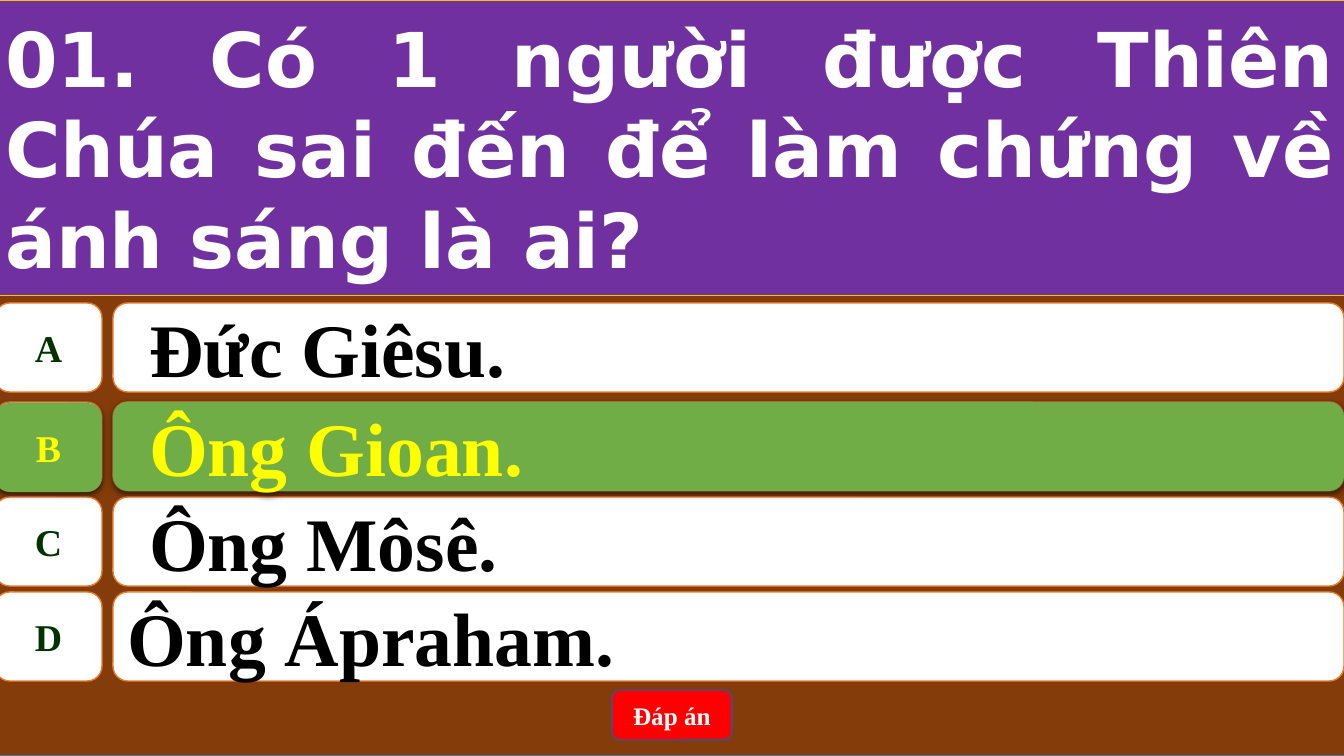
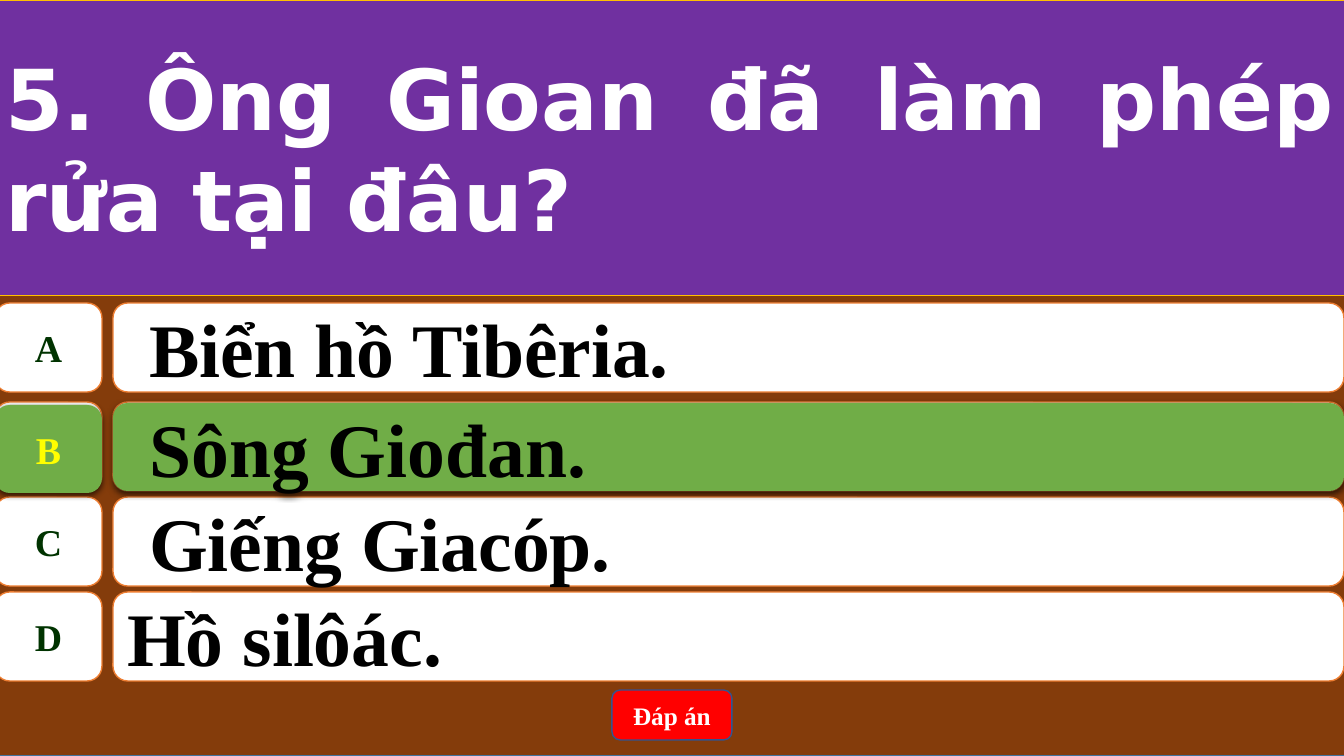
from lxml import etree
from pptx import Presentation
from pptx.dml.color import RGBColor
from pptx.enum.shapes import MSO_SHAPE
from pptx.enum.text import MSO_ANCHOR, MSO_AUTO_SIZE, PP_ALIGN
from pptx.oxml.ns import qn
from pptx.util import Pt

RECT, ROUND = MSO_SHAPE.RECTANGLE, MSO_SHAPE.ROUNDED_RECTANGLE
LETTER_BOX = MSO_SHAPE.FLOWCHART_ALTERNATE_PROCESS
LEFT, CENTER, JUSTIFY = PP_ALIGN.LEFT, PP_ALIGN.CENTER, PP_ALIGN.JUSTIFY
MIDDLE, NO_FIT = MSO_ANCHOR.MIDDLE, MSO_AUTO_SIZE.NONE

SLIDE_W, SLIDE_H = 1344, 756
EMU_PER_PX = 12192000 / SLIDE_W
SERIF, SANS = "Times New Roman", "DejaVu Sans"
COLORS = {
    "brown": "843C0B", "steel": "43739E", "purple": "7030A0", "gold": "FFC000",
    "white": "FFFFFF", "black": "000000", "orange": "ED7D31", "forest": "003300",
    "green": "70AD47", "yellow": "FFFF00", "red": "FF0000", "blue": "325491",
}

BAND_X, BAND_W, QUESTION_H = -5, 1350, 295
ROW_H = 89
ROW_TOPS = {"A": 303, "B": 402, "C": 497, "D": 592}
LETTER_W, ANSWER_X, ANSWER_W = 107, 113, 1231
BUTTON = (612, 690, 120, 50)

# Each highlight gives the tops of its answer and letter boxes.
QUIZ = [
    {"question": "01. Có 1 người được Thiên Chúa sai đến để làm chứng về ánh sáng là ai?",
     "size": 54,
     "answers": {"A": "Đức Giêsu.", "B": "Ông Gioan.", "C": "Ông Môsê.", "D": "Ông Ápraham."},
     "correct": "B", "highlight": (402, 403, 89), "correct_color": "yellow"},
    {"question": "5. Ông Gioan đã làm phép rửa tại đâu?",
     "size": 60,
     "answers": {"A": "Biển hồ Tibêria.", "B": "Sông Giođan.", "C": "Giếng Giacóp.", "D": "Hồ silôác."},
     "correct": "B", "highlight": (403, 405, 88), "correct_color": "black"},
]


def px(n):
    return round(n * EMU_PER_PX)


def rgb(name):
    return RGBColor.from_string(COLORS[name])


def paint(sp, fill, line=None, width=1):
    sp.fill.solid()
    sp.fill.fore_color.rgb = rgb(fill)
    if line:
        sp.line.color.rgb = rgb(line)
        sp.line.width = Pt(width)
    else:
        sp.line.fill.background()


def add_box(shapes, kind, box, fill, line=None):
    sp = shapes.add_shape(kind, *map(px, box))
    sp.shadow.inherit = False
    paint(sp, fill, line)
    return sp


def add_shadow(sp):
    effects = sp.element.spPr.find(qn("a:effectLst"))
    shadow = etree.SubElement(effects, qn("a:outerShdw"), blurRad=str(Pt(4.5)),
                              dist=str(Pt(1.5)), dir="5400000", rotWithShape="0")
    color = etree.SubElement(shadow, qn("a:srgbClr"), val=COLORS["black"])
    etree.SubElement(color, qn("a:alpha"), val="63000")


def write(sp, text, size, color, font=SERIF, align=CENTER, wrap=True, indented=False):
    tf = sp.text_frame
    tf.word_wrap = wrap
    tf.vertical_anchor = MIDDLE
    p = tf.paragraphs[0]
    p.alignment = align
    if indented:
        p.level = 1
        pPr = p._p.get_or_add_pPr()
        pPr.set("marL", str(px(50)))
        pPr.set("indent", str(px(-28)))
    r = p.add_run()
    r.text = text
    r.font.name, r.font.size, r.font.bold = font, Pt(size), True
    r.font.color.rgb = rgb(color)


def add_question(s, text, size):
    title = s.shapes.title
    title.left, title.top = px(BAND_X), 0
    title.width, title.height = px(BAND_W), px(QUESTION_H)
    paint(title, "purple", "gold", 0.5)
    write(title, text, size, "white", font=SANS, align=JUSTIFY)
    title.text_frame.auto_size = NO_FIT
    backdrop = add_box(s.shapes, RECT, (BAND_X, 0, BAND_W, SLIDE_H), "brown", "steel")
    title.element.addprevious(backdrop.element)


def add_option(s, letter, answer, answer_top, letter_top, height, fill="white",
               line="orange", letter_color="forest", answer_color="black", shadow=False):
    shapes = s.shapes.add_group_shape().shapes
    answer_box = add_box(shapes, ROUND, (ANSWER_X, answer_top, ANSWER_W, height), fill, line)
    letter_box = add_box(shapes, LETTER_BOX, (BAND_X, letter_top, LETTER_W, height), fill, line)
    write(answer_box, answer, 54, answer_color, align=LEFT, indented=letter != "D")
    write(letter_box, letter, 27, letter_color, wrap=False)
    if shadow:
        add_shadow(answer_box)
        add_shadow(letter_box)


def add_quiz_slide(prs, quiz):
    s = prs.slides.add_slide(prs.slide_layouts[5])
    add_question(s, quiz["question"], quiz["size"])
    for letter, top in ROW_TOPS.items():
        add_option(s, letter, quiz["answers"][letter], top, top, ROW_H)
    button = add_box(s.shapes, ROUND, BUTTON, "red", "blue")
    write(button, "Đáp án", 18, "white")
    correct = quiz["correct"]
    add_option(s, correct, quiz["answers"][correct], *quiz["highlight"], fill="green",
               line=None, letter_color="yellow", answer_color=quiz["correct_color"],
               shadow=True)


def main():
    prs = Presentation()
    prs.slide_width, prs.slide_height = px(SLIDE_W), px(SLIDE_H)
    for quiz in QUIZ:
        add_quiz_slide(prs, quiz)
    prs.save("out.pptx")


if __name__ == "__main__":
    main()
